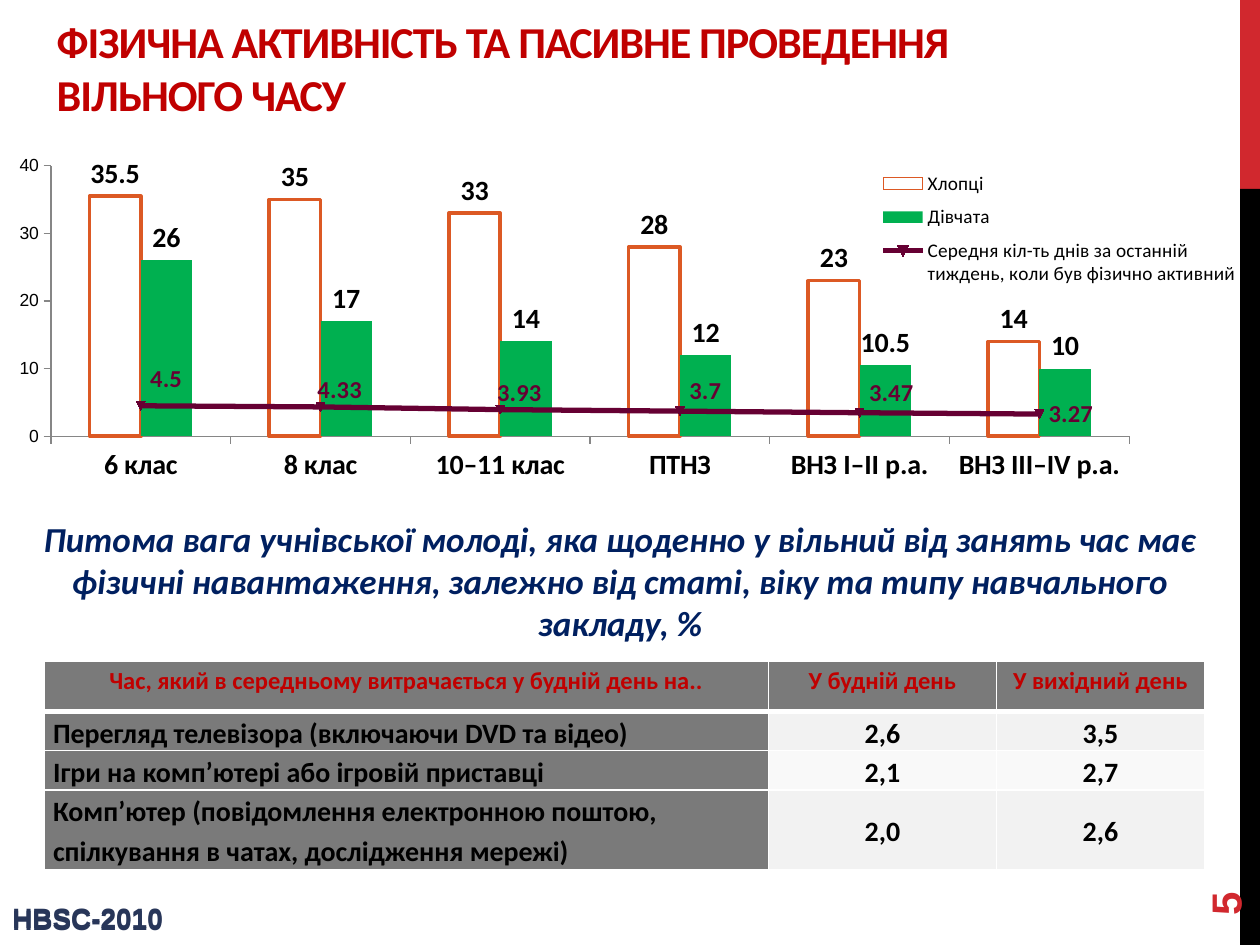
"""Build the slide on physical activity and passive leisure of pupils."""
from dataclasses import dataclass
from typing import Any

from lxml.etree import SubElement
from pptx import Presentation
from pptx.chart.data import CategoryChartData
from pptx.dml.color import RGBColor
from pptx.enum.chart import XL_CHART_TYPE as Kind, XL_LABEL_POSITION as LabelPos
from pptx.enum.chart import XL_LEGEND_POSITION as LegendPos, XL_MARKER_STYLE as Marker
from pptx.enum.chart import XL_TICK_MARK as Tick
from pptx.enum.shapes import MSO_SHAPE as Shape
from pptx.enum.text import MSO_ANCHOR as Anchor, MSO_AUTO_SIZE as AutoSize, PP_ALIGN as Align
from pptx.oxml import parse_xml
from pptx.oxml.ns import nsdecls, qn
from pptx.util import Cm, Pt

COLORS = {
    "red": "D1282E", "title": "C00000", "black": "000000", "white": "FFFFFF",
    "caption": "002060", "orange": "DC5924", "green": "00B050", "plum": "660033",
    "grey": "7A7A7A", "band": "F2F2F2", "light": "F9F9F9", "mark": "283659",
    "axis": "868686",
}
CATEGORIES = ["6 клас", "8 клас", "10–11 клас", "ПТНЗ", "ВНЗ І–ІІ р.а.", "ВНЗ ІІІ–ІV р.а."]
SERIES = {
    "Хлопці": [35.5, 35, 33, 28, 23, 14],
    "Дівчата": [26, 17, 14, 12, 10.5, 10],
    "Середня кіл-ть днів за останній тиждень, коли був фізично активний":
        [4.5, 4.33, 3.93, 3.7, 3.47, 3.27],
}
DAY_LABEL_SHIFTS = [(0, -0.08), (-0.01, -0.05), (-0.01, -0.05), (0, -0.06), (0, -0.06)]
ROWS = [
    ["Час, який в середньому витрачається у будній день на..", "У будній день", "У вихідний день"],
    ["Перегляд телевізора (включаючи DVD та відео)", "2,6", "3,5"],
    ["Ігри на комп’ютері або ігровій приставці", "2,1", "2,7"],
    ["Комп’ютер (повідомлення електронною поштою, спілкування в чатах, дослідження мережі)",
     "2,0", "2,6"],
]
COL_WIDTHS = [14.6, 4.6, 4.19]
ROW_HEIGHTS = [1, 0.79, 0.79, 1.6]


@dataclass
class Bar:
    """A band on the right edge, in centimetres."""
    top: float
    height: float
    color: str


@dataclass
class Label:
    """A text box, in centimetres and points."""
    text: str
    box: tuple[float, float, float, float]
    size: float
    color: str
    font: str = "Arial"
    italic: bool = False
    align: Align = Align.LEFT
    anchor: Anchor = Anchor.TOP
    rotation: float = 0


BARS = [Bar(0, 3.81, "red"), Bar(3.81, 15.24, "black")]
LABELS = [
    Label("Питома вага учнівської молоді, яка щоденно у вільний від занять час має фізичні "
          "навантаження, залежно від статі, віку та типу навчального закладу, %",
          (0.3, 10.31, 24.41, 3.86), 20, "caption", "Calibri", True, Align.CENTER),
    *(Label("HBSC-2010", (0, top, 5.79, 0.94), 16, "mark") for top in (18.03, 18.06)),
    Label("5", (22.86, 16.36, 3.66, 1.02), 24, "red", anchor=Anchor.MIDDLE, rotation=270),
]


def rgb(name: str) -> RGBColor:
    """Return a named colour."""
    return RGBColor.from_string(COLORS[name])


def set_font(font: Any, size: float, color: str = "black", name: str = "Calibri",
             bold: bool = True, italic: bool = False) -> None:
    """Format a font."""
    font.size, font.name, font.bold, font.italic = Pt(size), name, bold, italic
    font.color.rgb = rgb(color)


def add_bar(s: Any, bar: Bar) -> None:
    """Draw an edge band."""
    sp = s.shapes.add_shape(Shape.RECTANGLE, Cm(25), Cm(bar.top), Cm(0.4), Cm(bar.height))
    sp.shadow.inherit = False
    sp.fill.solid()
    sp.fill.fore_color.rgb = rgb(bar.color)
    sp.line.fill.background()


def add_label(s: Any, label: Label) -> None:
    """Draw a text box."""
    sp = s.shapes.add_textbox(*map(Cm, label.box))
    sp.rotation = label.rotation
    tf = sp.text_frame
    tf.word_wrap = True
    tf.vertical_anchor = label.anchor
    p = tf.paragraphs[0]
    p.text, p.alignment = label.text, label.align
    set_font(p.font, label.size, label.color, label.font, italic=label.italic)


def set_title(s: Any) -> None:
    """Fill and place the title."""
    sp = s.shapes.title
    sp.left, sp.top, sp.width, sp.height = map(Cm, (0.89, 0.53, 23.8, 2.03))
    tf = sp.text_frame
    tf.auto_size, tf.vertical_anchor = AutoSize.NONE, Anchor.BOTTOM
    p = tf.paragraphs[0]
    p.text = "ФІЗИЧНА АКТИВНІСТЬ ТА ПАСИВНЕ ПРОВЕДЕННЯ\vВІЛЬНОГО ЧАСУ"
    p.alignment = Align.LEFT
    set_font(p.font, 25.2, "title")
    for r in p.runs:
        r.font._element.set("spc", "-60")


def set_layout(parent: Any, index: int, inner: bool = False, **lengths: float) -> None:
    """Give a chart part a manual layout in fractions of the chart."""
    for old in parent.findall(qn("c:layout")):
        parent.remove(old)
    target = '<c:layoutTarget val="inner"/>' if inner else ""
    modes = '<c:xMode val="edge"/><c:yMode val="edge"/>' if "w" in lengths else ""
    values = "".join(f'<c:{key} val="{value}"/>' for key, value in lengths.items())
    parent.insert(index, parse_xml(
        f'<c:layout {nsdecls("c")}><c:manualLayout>{target}{modes}{values}'
        '</c:manualLayout></c:layout>'))


def move_to_line(area: Any) -> None:
    """Turn the last column series into a line on the same axes."""
    columns = area.find(qn("c:barChart"))
    ser = columns.findall(qn("c:ser"))[-1]
    for tag in ser.findall(qn("c:invertIfNegative")):
        ser.remove(tag)
    line = parse_xml(f'<c:lineChart {nsdecls("c")}><c:grouping val="stacked"/>'
                     '<c:varyColors val="0"/></c:lineChart>')
    line.append(ser)
    SubElement(line, qn("c:marker")).set("val", "1")
    for axis in columns.findall(qn("c:axId")):
        SubElement(line, qn("c:axId")).set("val", axis.get("val"))
    columns.addnext(line)


def add_chart(s: Any) -> None:
    """Draw the columns with the line of active days."""
    data = CategoryChartData()
    data.categories = CATEGORIES
    for name, values in SERIES.items():
        data.add_series(name, values)
    box = map(Cm, (0.15, 2.92, 25.1, 6.81))
    chart = s.shapes.add_chart(Kind.COLUMN_CLUSTERED, *box, data).chart
    chart.has_title = False
    set_font(chart.font, 10, name="Arial", bold=False)
    plot = chart.plots[0]
    plot.gap_width, plot.overlap, plot.vary_by_categories = 150, 0, False
    area = chart._chartSpace.find(".//" + qn("c:plotArea"))
    move_to_line(area)
    set_layout(area, 0, True, x=0.035, y=0.062, w=0.866, h=0.804)

    for axis in (chart.category_axis, chart.value_axis):
        axis.has_major_gridlines = False
        axis.major_tick_mark, axis.minor_tick_mark = Tick.OUTSIDE, Tick.NONE
        axis.format.line.color.rgb = rgb("axis")
    set_font(chart.category_axis.tick_labels.font, 16)
    value_axis = chart.value_axis
    value_axis.minimum_scale, value_axis.maximum_scale, value_axis.major_unit = 0, 40, 10

    boys, girls, days = chart.series
    for ser, color in ((boys, "white"), (girls, "green")):
        ser.format.fill.solid()
        ser.format.fill.fore_color.rgb = rgb(color)
        ser.data_labels.show_value = True
        ser.data_labels.position = LabelPos.OUTSIDE_END
        set_font(ser.data_labels.font, 16)
    boys.format.line.color.rgb, boys.format.line.width = rgb("orange"), Pt(2)
    days.smooth = False
    days.format.line.color.rgb, days.format.line.width = rgb("plum"), Pt(3)
    days.marker.style, days.marker.size = Marker.AUTOMATIC, 5
    days.marker.format.fill.solid()
    days.marker.format.fill.fore_color.rgb = rgb("plum")
    days.marker.format.line.color.rgb = rgb("plum")
    days.data_labels.show_value, days.data_labels.position = True, LabelPos.RIGHT
    set_font(days.data_labels.font, 14, "plum")
    for i, (x, y) in enumerate(DAY_LABEL_SHIFTS):
        label = days.points[i].data_label
        set_font(label.font, 14, "plum")
        label.position = LabelPos.RIGHT
        set_layout(days._element.findall(".//" + qn("c:dLbl"))[i], 1, x=x, y=y)

    chart.has_legend = True
    legend = chart.legend
    legend.position, legend.include_in_layout = LegendPos.RIGHT, True
    set_font(legend.font, 11, bold=False)
    set_layout(legend._element, 1, x=0.695, y=0.05, w=0.3, h=0.4)


def set_borders(cell: Any, **widths: int) -> None:
    """Give a cell white borders with widths in points."""
    for i, side in enumerate("LRTB"):
        cell._tc.get_or_add_tcPr().insert(i, parse_xml(
            f'<a:ln{side} {nsdecls("a")} w="{Pt(widths.get(side, 1))}"><a:solidFill>'
            f'<a:srgbClr val="{COLORS["white"]}"/></a:solidFill></a:ln{side}>'))


def add_table(s: Any) -> None:
    """Draw the table of hours spent."""
    box = map(Cm, (0.89, 13.34, sum(COL_WIDTHS), sum(ROW_HEIGHTS)))
    table = s.shapes.add_table(len(ROWS), len(COL_WIDTHS), *box).table
    for col, width in zip(table.columns, COL_WIDTHS):
        col.width = Cm(width)
    for i, (row, height) in enumerate(zip(ROWS, ROW_HEIGHTS)):
        table.rows[i].height = Cm(height)
        for j, text in enumerate(row):
            cell, head, first = table.cell(i, j), i == 0, j == 0
            cell.margin_left = cell.margin_right = Cm(0.18)
            cell.margin_top = cell.margin_bottom = 0
            cell.vertical_anchor = Anchor.TOP if head or first else Anchor.MIDDLE
            cell.fill.solid()
            band = "band" if i % 2 else "light"
            cell.fill.fore_color.rgb = rgb("grey" if head or first else band)
            set_borders(cell, T=3 if i == 1 else 1, B=3 if head else 1)
            p = cell.text_frame.paragraphs[0]
            p.text, p.line_spacing = text, 1.15
            p.alignment = Align.LEFT if first and not head else Align.CENTER
            set_font(p.font, 14 if head else 16, "title" if head else "black")


def main() -> None:
    """Build and save the slide."""
    prs = Presentation()
    prs.slide_width, prs.slide_height = Cm(25.4), Cm(19.05)
    s = prs.slides.add_slide(prs.slide_layouts[5])
    for bar in BARS:
        add_bar(s, bar)
    set_title(s)
    add_chart(s)
    add_table(s)
    for label in LABELS:
        add_label(s, label)
    prs.save("out.pptx")


if __name__ == "__main__":
    main()
